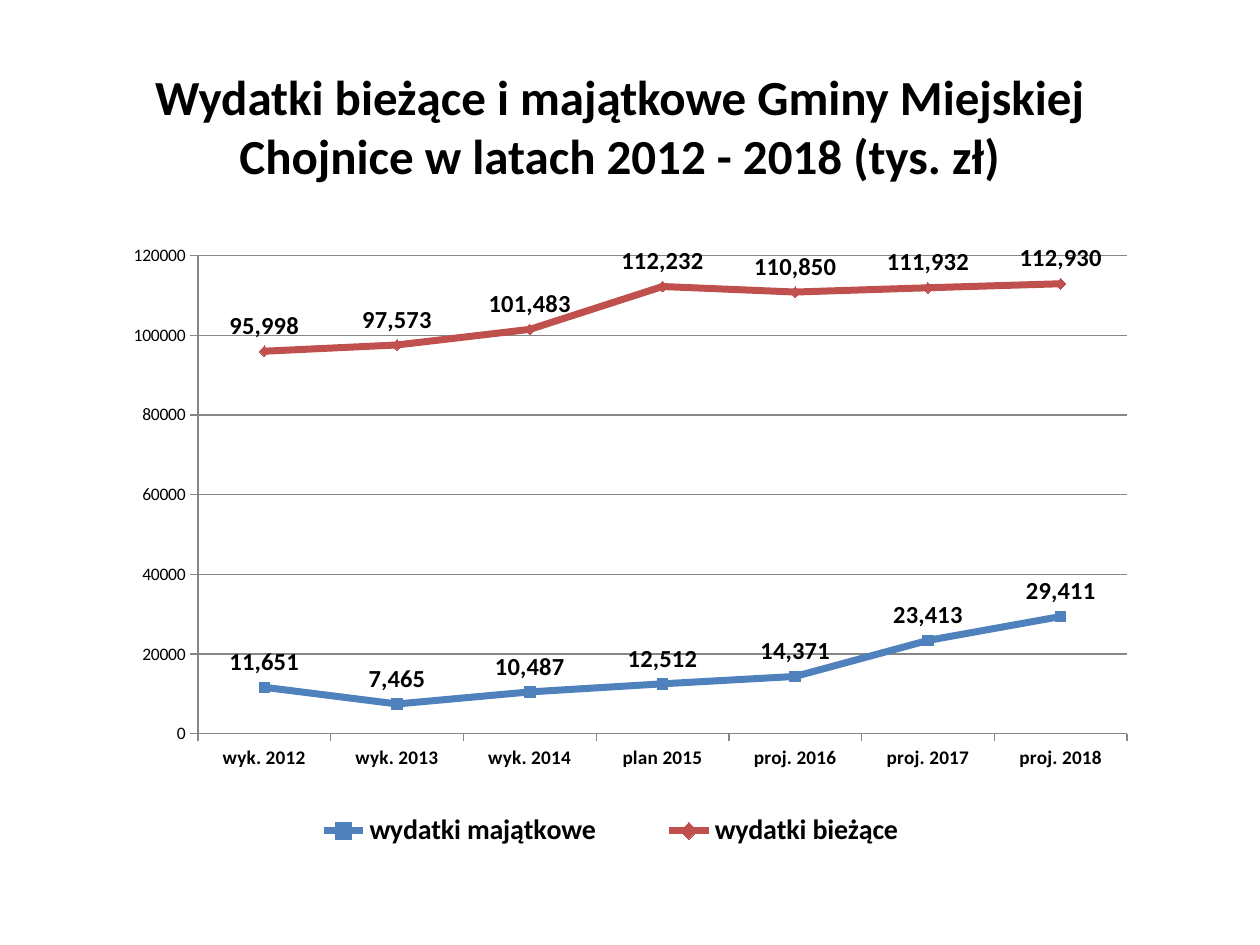
from lxml.etree import SubElement
from pptx import Presentation
from pptx.chart.data import CategoryChartData
from pptx.dml.color import RGBColor
from pptx.enum.chart import XL_CHART_TYPE, XL_LABEL_POSITION, XL_LEGEND_POSITION, XL_MARKER_STYLE, XL_TICK_MARK
from pptx.enum.text import MSO_ANCHOR, PP_ALIGN
from pptx.oxml.ns import qn
from pptx.util import Pt

COLORS = {"text": "000000", "grid": "868686", "capital": "4F81BD", "current": "C0504D"}
YEARS = ["wyk. 2012", "wyk. 2013", "wyk. 2014", "plan 2015",
         "proj. 2016", "proj. 2017", "proj. 2018"]
SERIES = [
    ("wydatki majątkowe", "capital", XL_MARKER_STYLE.SQUARE,
     [11651, 7465, 10487, 12512, 14371, 23413, 29411]),
    ("wydatki bieżące", "current", XL_MARKER_STYLE.DIAMOND,
     [95998, 97573, 101483, 112232, 110850, 111932, 112930]),
]


def color(name):
    return RGBColor.from_string(COLORS[name])


def style(font, size=10, bold=False, name="Calibri", fill="text"):
    font.name = name
    font.size = Pt(size)
    font.bold = bold
    font.color.rgb = color(fill)


def place(layout, box, inner=False):
    for child in list(layout):
        layout.remove(child)
    manual = SubElement(layout, qn("c:manualLayout"))
    rules = [("layoutTarget", "inner")] if inner else []
    rules += [("xMode", "edge"), ("yMode", "edge")]
    rules += zip("xywh", box)
    for tag, value in rules:
        SubElement(manual, qn(f"c:{tag}")).set("val", str(value))


class Deck:
    def __init__(self, show):
        self.slide = show.slides.add_slide(show.slide_layouts[5])

    def title(self, text, left, top, width, height):
        shape = self.slide.shapes.title
        shape.left, shape.top = Pt(left), Pt(top)
        shape.width, shape.height = Pt(width), Pt(height)
        frame = shape.text_frame
        frame.text = text
        frame.word_wrap = True
        frame.vertical_anchor = MSO_ANCHOR.MIDDLE
        line = frame.paragraphs[0]
        line.alignment = PP_ALIGN.CENTER
        style(line.runs[0].font, size=28, bold=True)

    def chart(self, left, top, width, height):
        data = CategoryChartData()
        data.categories = YEARS
        for name, _, _, values in SERIES:
            data.add_series(name, values)
        chart = self.slide.shapes.add_chart(
            XL_CHART_TYPE.LINE_MARKERS, Pt(left), Pt(top), Pt(width), Pt(height), data).chart
        style(chart.font)
        chart.has_title = False
        area = chart.plots[0]
        area.vary_by_categories = False
        for line, (_, fill, marker, _) in zip(area.series, SERIES):
            self.series(line, fill, marker)
        self.axes(chart)
        self.legend(chart)
        plot = chart.element.chart.plotArea
        place(plot.get_or_add_layout() if hasattr(plot, "get_or_add_layout")
              else self.layout(plot), (0.09, 0.1, 0.9, 0.69), inner=True)

    def layout(self, plot):
        found = plot.find(qn("c:layout"))
        if found is None:
            found = SubElement(plot, qn("c:layout"))
            plot.insert(0, found)
        return found

    def series(self, line, fill, marker):
        line.smooth = False
        line.format.line.color.rgb = color(fill)
        line.format.line.width = Pt(4)
        line.marker.style = marker
        line.marker.size = 6
        line.marker.format.fill.solid()
        line.marker.format.fill.fore_color.rgb = color(fill)
        line.marker.format.line.color.rgb = color(fill)
        labels = line.data_labels
        labels.show_value = True
        labels.position = XL_LABEL_POSITION.ABOVE
        labels.number_format = "#,##0"
        labels.number_format_is_linked = False
        style(labels.font, size=14, bold=True)

    def axes(self, chart):
        years, values = chart.category_axis, chart.value_axis
        style(years.tick_labels.font, size=11, bold=True)
        style(values.tick_labels.font)
        values.minimum_scale, values.maximum_scale = 0, 120000
        values.major_unit = 20000
        values.has_major_gridlines = True
        values.tick_labels.number_format = "General"
        values.tick_labels.number_format_is_linked = False
        for axis in (years, values):
            axis.major_tick_mark = XL_TICK_MARK.OUTSIDE
        for rule in (years.format.line, values.format.line, values.major_gridlines.format.line):
            rule.color.rgb = color("grid")
            rule.width = Pt(0.75)

    def legend(self, chart):
        chart.has_legend = True
        legend = chart.legend
        legend.position = XL_LEGEND_POSITION.RIGHT
        legend.include_in_layout = False
        style(legend.font, size=16, bold=True)
        node = chart.element.find(".//" + qn("c:legend"))
        spot = node.find(qn("c:layout"))
        if spot is None:
            spot = SubElement(node, qn("c:layout"))
            node.find(qn("c:legendPos")).addnext(spot)
        place(spot, (0.15, 0.89, 0.68, 0.08))


def main():
    show = Presentation()
    show.slide_width, show.slide_height = Pt(720), Pt(540)
    deck = Deck(show)
    deck.title("Wydatki bieżące i majątkowe Gminy Miejskiej Chojnice w latach 2012 - 2018 (tys. zł)",
               31, 26, 646, 91)
    deck.chart(60, 106.5, 590, 396)
    show.save("out.pptx")


if __name__ == "__main__":
    main()
